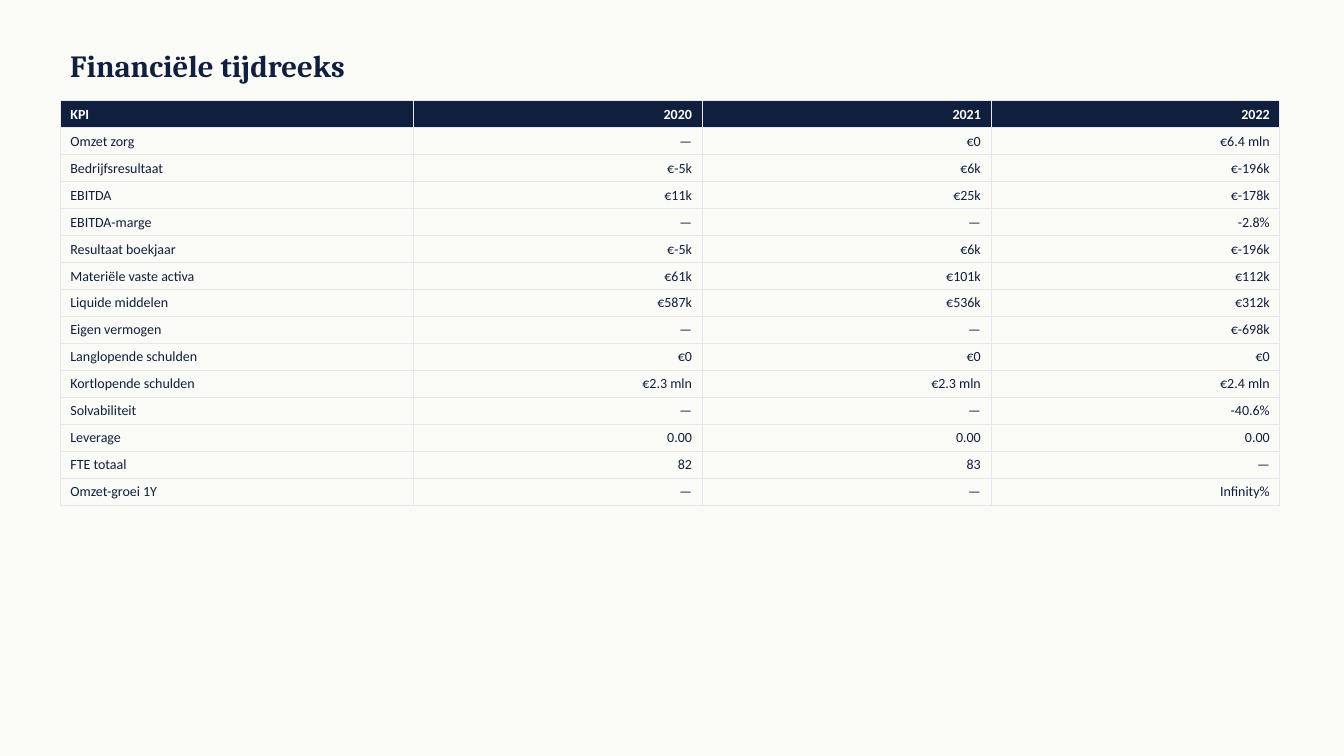
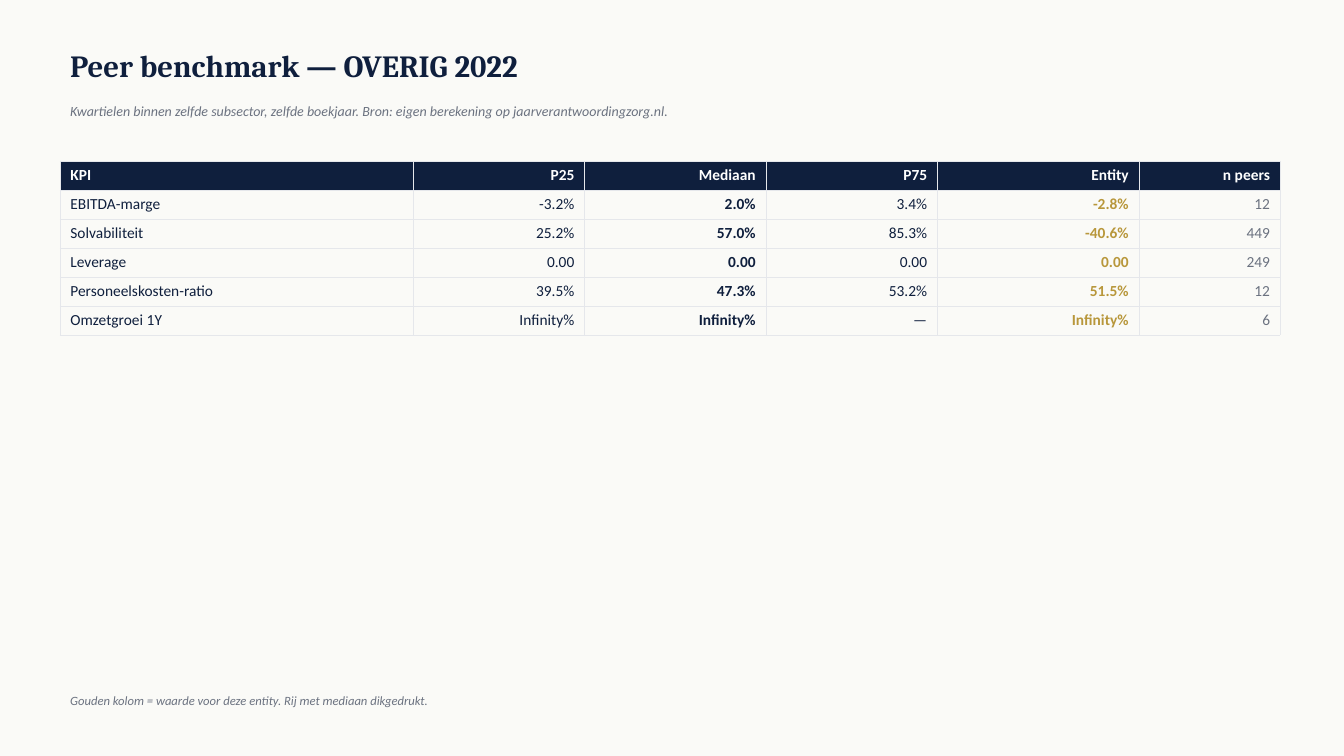
import pptx
import pptx.dml.color
import pptx.enum.text
import pptx.oxml
import pptx.oxml.ns
import pptx.util

Cm = pptx.util.Cm
Pt = pptx.util.Pt
RGB = pptx.dml.color.RGBColor.from_string
Anchor = pptx.enum.text.MSO_ANCHOR
Align = pptx.enum.text.PP_ALIGN


class Theme:
    paper = RGB("FAFAF7")
    navy = RGB("0F1F3D")
    white = RGB("FFFFFF")
    grey = RGB("6B7280")
    gold = RGB("B8973B")
    rule = RGB("E5E7EB")
    heading_font = "Cambria"
    body_font = "Calibri"
    title_size = Pt(22)
    series_size = Pt(10)
    benchmark_size = Pt(11)
    subtitle_size = Pt(10)
    footnote_size = Pt(9)
    rule_width = Pt(0.5)


LEFT = Cm(1.52)
TEXT_WIDTH = Cm(30.48)
TITLE_TOP, TITLE_HEIGHT = Cm(1.02), Cm(1.27)
NOTE_HEIGHT = Cm(0.76)


def add_line(page, text, top, height, font_name, size, color, bold=False, italic=False):
    """Add a one-line text box across the page."""
    box = page.shapes.add_textbox(LEFT, top, TEXT_WIDTH, height)
    frame = box.text_frame
    frame.word_wrap = True
    frame.vertical_anchor = Anchor.MIDDLE
    para = frame.paragraphs[0]
    para.text = text
    font = para.font
    font.name, font.size, font.color.rgb = font_name, size, color
    font.bold, font.italic = bold, italic


def add_kpi_table(page, top, widths, row_height, size, rows, column_styles):
    """Add a ruled table with a navy header; column_styles maps a column to (colour, bold)."""
    frame = page.shapes.add_table(
        len(rows), len(widths), LEFT, top, sum(widths), row_height * len(rows))
    table = frame.table
    table.horz_banding = False
    for column, width in zip(table.columns, widths):
        column.width = width
    for r, values in enumerate(rows):
        table.rows[r].height = row_height
        for c, value in enumerate(values):
            cell = table.cell(r, c)
            properties = cell._tc.get_or_add_tcPr()
            for side in ("lnL", "lnR", "lnT", "lnB"):
                properties.append(pptx.oxml.parse_xml(
                    f'<a:{side} {pptx.oxml.ns.nsdecls("a")} w="{Theme.rule_width}">'
                    f'<a:solidFill><a:srgbClr val="{Theme.rule}"/></a:solidFill></a:{side}>'))
            if r == 0:
                cell.fill.solid()
                cell.fill.fore_color.rgb = Theme.navy
                color, bold = Theme.white, True
            else:
                cell.fill.background()
                color, bold = column_styles.get(c, (Theme.navy, False))
            para = cell.text_frame.paragraphs[0]
            para.text = value
            para.alignment = Align.RIGHT if c else Align.LEFT
            font = para.font
            font.name, font.size, font.bold = Theme.body_font, size, bold
            font.color.rgb = color


deck = pptx.Presentation()
deck.slide_width, deck.slide_height = Cm(33.87), Cm(19.05)
master_fill = deck.slide_master.background.fill
master_fill.solid()
master_fill.fore_color.rgb = Theme.paper

pages = []
for title in ("Financiële tijdreeks", "Peer benchmark — OVERIG 2022"):
    page = deck.slides.add_slide(deck.slide_layouts[6])
    add_line(page, title, TITLE_TOP, TITLE_HEIGHT,
             Theme.heading_font, Theme.title_size, Theme.navy, bold=True)
    pages.append(page)
series_page, benchmark_page = pages

series_rows = [
    ("KPI", "2020", "2021", "2022"),
    ("Omzet zorg", "—", "€0", "€6.4 mln"),
    ("Bedrijfsresultaat", "€-5k", "€6k", "€-196k"),
    ("EBITDA", "€11k", "€25k", "€-178k"),
    ("EBITDA-marge", "—", "—", "-2.8%"),
    ("Resultaat boekjaar", "€-5k", "€6k", "€-196k"),
    ("Materiële vaste activa", "€61k", "€101k", "€112k"),
    ("Liquide middelen", "€587k", "€536k", "€312k"),
    ("Eigen vermogen", "—", "—", "€-698k"),
    ("Langlopende schulden", "€0", "€0", "€0"),
    ("Kortlopende schulden", "€2.3 mln", "€2.3 mln", "€2.4 mln"),
    ("Solvabiliteit", "—", "—", "-40.6%"),
    ("Leverage", "0.00", "0.00", "0.00"),
    ("FTE totaal", "82", "83", "—"),
    ("Omzet-groei 1Y", "—", "—", "Infinity%"),
]
series_widths = [Cm(8.89)] + [Cm(7.28)] * 3
add_kpi_table(series_page, Cm(2.54), series_widths, Cm(0.68),
              Theme.series_size, series_rows, {})

benchmark_rows = [
    ("KPI", "P25", "Mediaan", "P75", "Entity", "n peers"),
    ("EBITDA-marge", "-3.2%", "2.0%", "3.4%", "-2.8%", "12"),
    ("Solvabiliteit", "25.2%", "57.0%", "85.3%", "-40.6%", "449"),
    ("Leverage", "0.00", "0.00", "0.00", "0.00", "249"),
    ("Personeelskosten-ratio", "39.5%", "47.3%", "53.2%", "51.5%", "12"),
    ("Omzetgroei 1Y", "Infinity%", "Infinity%", "—", "Infinity%", "6"),
]
benchmark_widths = [Cm(width) for width in (8.89, 4.32, 4.57, 4.32, 5.08, 3.56)]
benchmark_styles = {2: (Theme.navy, True), 4: (Theme.gold, True), 5: (Theme.grey, False)}
notes = [
    ("Kwartielen binnen zelfde subsector, zelfde boekjaar. "
     "Bron: eigen berekening op jaarverantwoordingzorg.nl.", Cm(2.41), Theme.subtitle_size),
    ("Gouden kolom = waarde voor deze entity. Rij met mediaan dikgedrukt.",
     Cm(17.27), Theme.footnote_size),
]
for text, top, size in notes:
    add_line(benchmark_page, text, top, NOTE_HEIGHT,
             Theme.body_font, size, Theme.grey, italic=True)
add_kpi_table(benchmark_page, Cm(4.06), benchmark_widths, Cm(0.73),
              Theme.benchmark_size, benchmark_rows, benchmark_styles)

deck.save("out.pptx")
